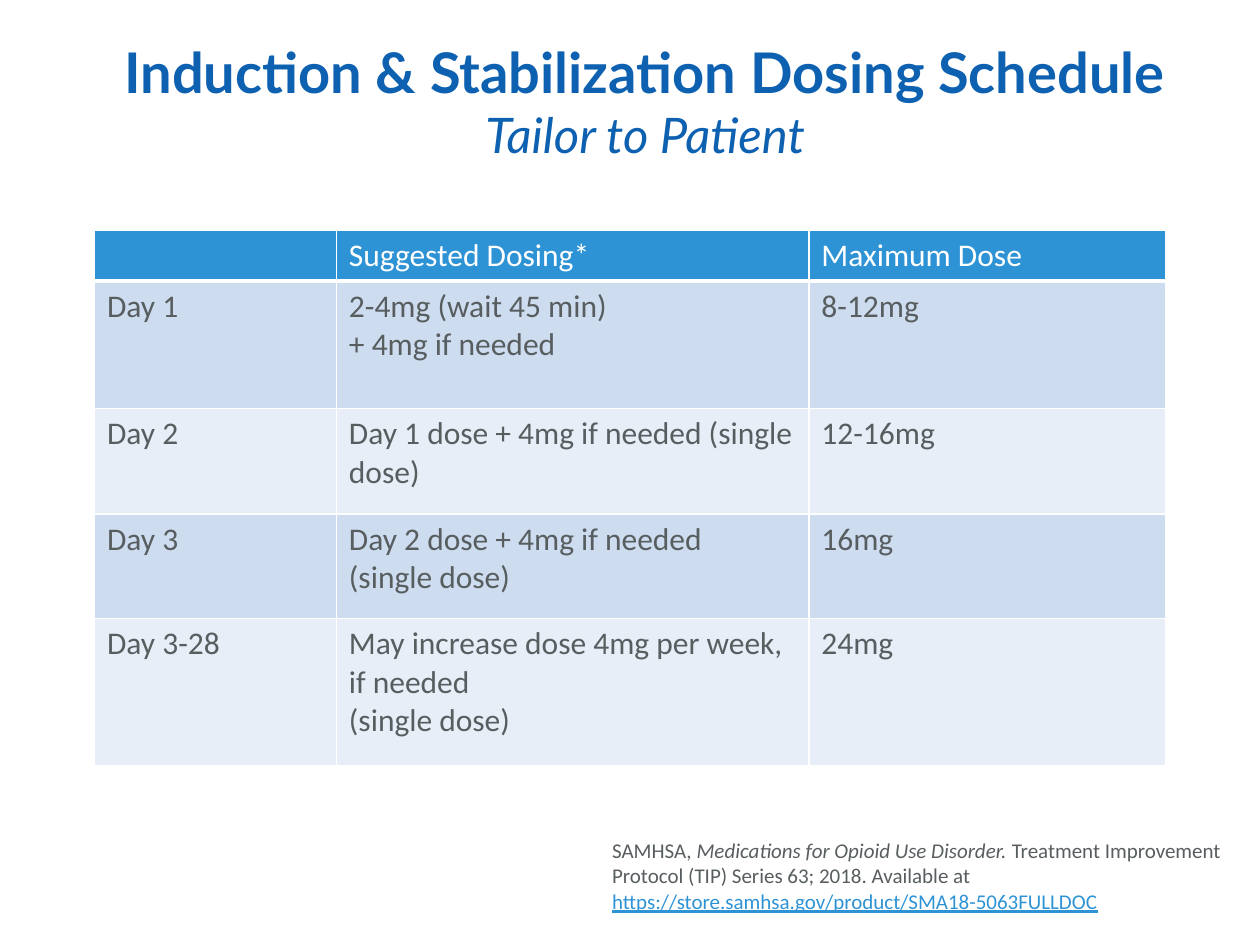
from lxml import etree
from pptx import Presentation
from pptx import util as u
from pptx.dml.color import RGBColor
from pptx.enum import text
from pptx.oxml import ns

WHITE = RGBColor(0xFF, 0xFF, 0xFF)
NAVY = RGBColor(0x0E, 0x61, 0xB0)
BLUE = RGBColor(0x2E, 0x93, 0xD5)
GREY = RGBColor(0x58, 0x5E, 0x60)
BANDS = (RGBColor(0xCD, 0xDC, 0xEF), RGBColor(0xE8, 0xEE, 0xF7))

COLUMN_WIDTHS = (1.92, 3.75, 2.83)
ROW_HEIGHTS = (0.4, 1.01, 0.84, 0.83, 1.17)
SCHEDULE = (
    ("", "Suggested Dosing*", "Maximum Dose"),
    ("Day 1", "2-4mg (wait 45 min)\n+ 4mg if needed", "8-12mg"),
    ("Day 2", "Day 1 dose + 4mg if needed (single dose)", "12-16mg"),
    ("Day 3", "Day 2 dose + 4mg if needed\n(single dose)", "16mg"),
    ("Day 3-28", "May increase dose 4mg per week, if needed\n(single dose)", "24mg"),
)


class SlideBuilder:
    """Holds the text style and the current slide."""

    body_font = "Calibri"
    title_font = "Lato"

    def __init__(self, page):
        self.page = page

    def style(self, font, name, color, size=None):
        font.name = name
        font.color.rgb = color
        if size:
            font.size = u.Pt(size)

    def box(self, left, top, width, height):
        frame = self.page.shapes.add_textbox(
            *map(u.Inches, (left, top, width, height))).text_frame
        frame.word_wrap = True
        return frame

    def span(self, para, words, **settings):
        span = para.add_run()
        span.text = words
        for name, value in settings.items():
            setattr(span.font, name, value)
        return span

    def title(self, heading, subheading):
        frame = self.box(0.33, 0.17, 9.58, 1.25)
        frame.vertical_anchor = text.MSO_ANCHOR.MIDDLE
        para = frame.paragraphs[0]
        para.alignment = text.PP_ALIGN.CENTER
        self.style(para.font, self.title_font, NAVY)
        self.span(para, heading, size=u.Pt(32), bold=True)
        para.add_line_break()
        self.span(para, subheading, size=u.Pt(28), italic=True)
        for span in para.runs:
            self.style(span.font, self.title_font, NAVY)

    def borders(self, cell, bottom):
        properties = cell._tc.get_or_add_tcPr()
        widths = {"lnL": 1, "lnR": 1, "lnT": 1, "lnB": bottom}
        for place, (side, points) in enumerate(widths.items()):
            line = etree.Element(ns.qn("a:" + side), w=str(u.Pt(points)))
            fill = etree.SubElement(line, ns.qn("a:solidFill"))
            etree.SubElement(fill, ns.qn("a:srgbClr"), val=str(WHITE))
            properties.insert(place, line)

    def table(self, left, top, rows, widths, heights):
        table = self.page.shapes.add_table(
            len(rows), len(widths), u.Inches(left), u.Inches(top),
            u.Inches(sum(widths)), u.Inches(sum(heights))).table
        table.first_row = table.horz_banding = False
        for column, width in zip(table.columns, widths):
            column.width = u.Inches(width)
        for index, (row, height) in enumerate(zip(table.rows, heights)):
            row.height = u.Inches(height)
            header = index == 0
            for cell, words in zip(row.cells, rows[index]):
                cell.text = words
                cell.fill.solid()
                cell.fill.fore_color.rgb = BLUE if header else BANDS[(index - 1) % 2]
                self.borders(cell, bottom=3 if header else 1)
                for para in cell.text_frame.paragraphs:
                    self.style(para.font, self.body_font, WHITE if header else GREY, 18)

    def citation(self, author, work, series, address):
        para = self.box(4.76, 6.6, 5.5, 0.91).paragraphs[0]
        self.span(para, author)
        self.span(para, work, italic=True)
        self.span(para, series)
        self.span(para, address, underline=True)
        for span in para.runs:
            color = BLUE if span.font.underline else GREY
            self.style(span.font, self.body_font, color, 12)


def main():
    deck = Presentation()
    deck.slide_width, deck.slide_height = u.Inches(10), u.Inches(7.5)
    builder = SlideBuilder(deck.slides.add_slide(deck.slide_layouts[6]))

    # Title
    builder.title("Induction & Stabilization Dosing Schedule", "Tailor to Patient")

    # Dosing schedule
    builder.table(0.75, 1.83, SCHEDULE, COLUMN_WIDTHS, ROW_HEIGHTS)

    # Source
    builder.citation(
        "SAMHSA, ",
        "Medications for Opioid Use Disorder. ",
        "Treatment Improvement Protocol (TIP) Series 63; 2018. Available at ",
        "https://store.samhsa.gov/product/SMA18-5063FULLDOC")

    deck.save("out.pptx")


if __name__ == "__main__":
    main()
